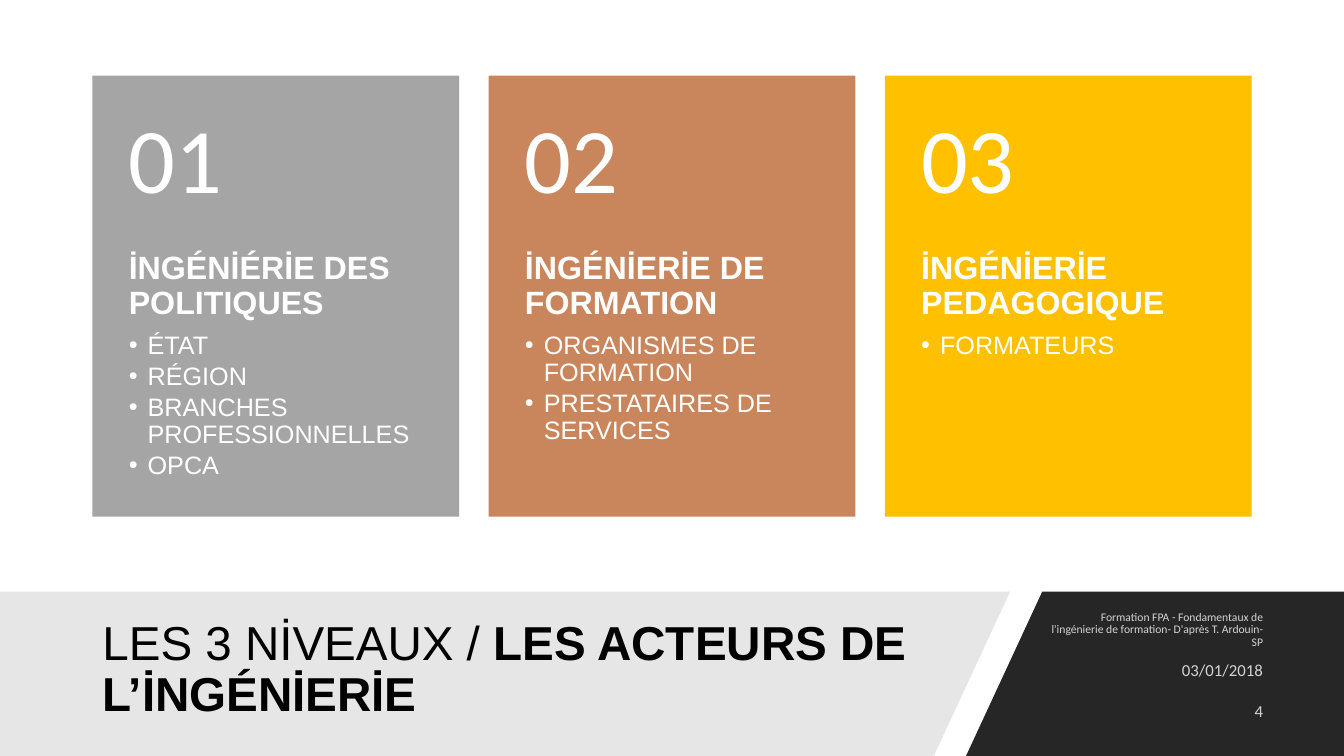
from lxml import etree
from pptx import Presentation
from pptx.dml.color import RGBColor
from pptx.enum import shapes, text
from pptx.oxml import ns
from pptx.util import Pt

LEVELS = [
    ("01", "İNGÉNİÉRİE DES POLITIQUES", "A5A5A5",
     ["ÉTAT", "RÉGION", "BRANCHES PROFESSIONNELLES", "OPCA"]),
    ("02", "İNGÉNİERİE DE FORMATION", "C9865C",
     ["ORGANISMES DE FORMATION", "PRESTATAIRES DE SERVICES"]),
    ("03", "İNGÉNİERİE PEDAGOGIQUE", "FFC000", ["FORMATEURS"]),
]
TITLE = [("LES 3 NİVEAUX / ", False), ("LES ACTEURS DE L’İNGÉNİERİE", True)]
FOOTER = [
    ("Formation FPA - Fondamentaux de l'ingénierie de formation- D'après T. Ardouin-SP", 8.3, 0.9),
    ("03/01/2018", 12, 1),
    ("4", 12, 1),
]
BANDS = [
    ("262626", [(744.5, 422.5), (960, 422.5), (960, 540), (690, 540)]),
    ("E7E6E6", [(0, 422.5), (721.5, 422.5), (667, 540), (0, 540)]),
]

CARD_LEFT, CARD_TOP, CARD_WIDTH, CARD_HEIGHT = 66, 54, 262, 315
CARD_PITCH = 283
NUMBER_HEIGHT = 126
FOOTER_LEFT, FOOTER_TOP, FOOTER_WIDTH, FOOTER_HEIGHT = 741.5, 435.6, 167.8, 28.8


def color(value):
    return RGBColor.from_string(value)


def paint(shape, value):
    shape.shadow.inherit = False
    shape.fill.solid()
    shape.fill.fore_color.rgb = color(value)
    shape.line.fill.background()


def add_span(para, words, size, value, font="Arial", bold=False):
    span = para.add_run()
    span.text = words
    span.font.name = font
    span.font.size = Pt(size)
    span.font.bold = bold
    span.font.color.rgb = color(value)


def set_frame(frame, anchor, insets=(7.2, 3.6, 7.2, 3.6)):
    frame.word_wrap = True
    frame.auto_size = text.MSO_AUTO_SIZE.NONE
    frame.vertical_anchor = anchor
    frame.margin_left, frame.margin_top, frame.margin_right, frame.margin_bottom = map(Pt, insets)


def add_box(page, left, top, width, height, anchor, **options):
    box = page.shapes.add_textbox(Pt(left), Pt(top), Pt(width), Pt(height))
    set_frame(box.text_frame, anchor, **options)
    return box.text_frame


def set_spacing(para, line, after=0):
    para.line_spacing = line
    para.space_before = Pt(0)
    para.space_after = Pt(after)


def add_bullet(para):
    props = para._p.get_or_add_pPr()
    props.set("marL", str(Pt(13.5)))
    props.set("indent", str(Pt(-13.5)))
    etree.SubElement(props, ns.qn("a:buFont")).set("typeface", "Arial")
    etree.SubElement(props, ns.qn("a:buChar")).set("char", "•")


def add_band(page, value, points):
    corners = [(Pt(x), Pt(y)) for x, y in points]
    builder = page.shapes.build_freeform(*corners[0], scale=1.0)
    builder.add_line_segments(corners[1:], close=True)
    paint(builder.convert_to_shape(), value)


def add_card(page, left, number, heading, value, actors):
    card = page.shapes.add_shape(shapes.MSO_SHAPE.RECTANGLE, Pt(left), Pt(CARD_TOP),
                                 Pt(CARD_WIDTH), Pt(CARD_HEIGHT))
    paint(card, value)
    frame = add_box(page, left, CARD_TOP + NUMBER_HEIGHT, CARD_WIDTH, CARD_HEIGHT - NUMBER_HEIGHT,
                    text.MSO_ANCHOR.TOP, insets=(26, 0, 26, 26))
    para = frame.paragraphs[0]
    set_spacing(para, 0.9, 8)
    add_span(para, heading, 23, "FFFFFF", bold=True)
    for actor in actors:
        para = frame.add_paragraph()
        set_spacing(para, 0.9, 2.7)
        add_bullet(para)
        add_span(para, actor, 18, "FFFFFF")
    frame = add_box(page, left, CARD_TOP, CARD_WIDTH, NUMBER_HEIGHT,
                    text.MSO_ANCHOR.MIDDLE, insets=(26, 13, 26, 13))
    para = frame.paragraphs[0]
    set_spacing(para, 0.9)
    add_span(para, number, 66, "FFFFFF", "Calibri")


def add_title(page):
    title = page.shapes.title
    title.left, title.top, title.width, title.height = map(Pt, (66, 435.6, 607.7, 86.4))
    set_frame(title.text_frame, text.MSO_ANCHOR.MIDDLE)
    para = title.text_frame.paragraphs[0]
    para.alignment = text.PP_ALIGN.LEFT
    set_spacing(para, 0.9)
    for words, bold in TITLE:
        add_span(para, words, 34, "000000", bold=bold)


def main():
    deck = Presentation()
    deck.slide_width, deck.slide_height = Pt(960), Pt(540)
    page = deck.slides.add_slide(deck.slide_layouts[5])
    for value, points in BANDS:
        add_band(page, value, points)
    title = page.shapes.title._element
    title.getparent().append(title)
    add_title(page)
    for index, level in enumerate(LEVELS):
        add_card(page, CARD_LEFT + index * CARD_PITCH, *level)
    for index, (words, size, line) in enumerate(FOOTER):
        frame = add_box(page, FOOTER_LEFT, FOOTER_TOP + index * FOOTER_HEIGHT,
                        FOOTER_WIDTH, FOOTER_HEIGHT, text.MSO_ANCHOR.MIDDLE)
        para = frame.paragraphs[0]
        para.alignment = text.PP_ALIGN.RIGHT
        set_spacing(para, line, 6)
        add_span(para, words, size, "D4D4D4", "Calibri")
    deck.save("out.pptx")


if __name__ == "__main__":
    main()
